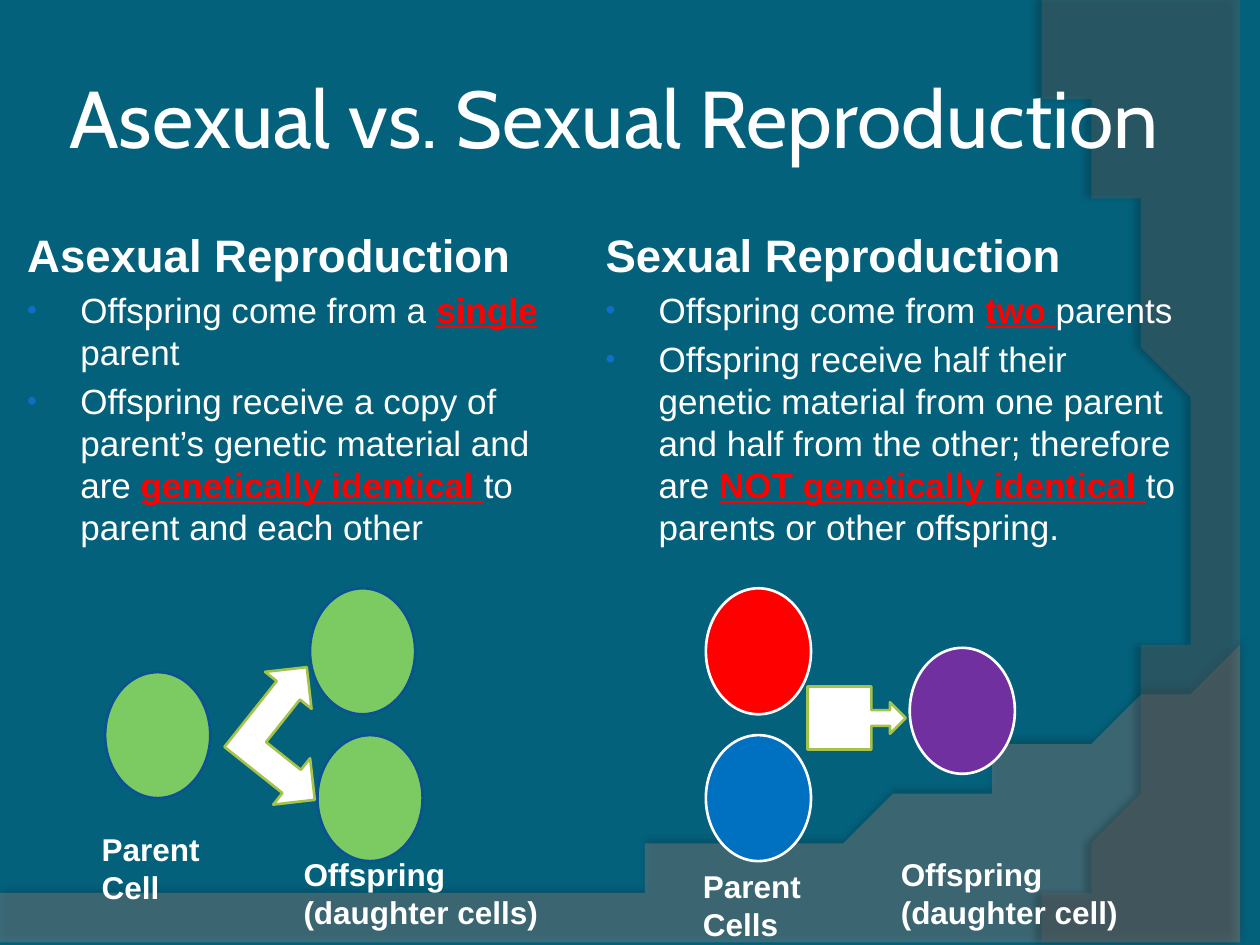
from lxml.etree import SubElement
from pptx import Presentation
from pptx.dml.color import RGBColor
from pptx.enum.shapes import MSO_SHAPE as Shape
from pptx.enum.text import MSO_ANCHOR as Anchor
from pptx.oxml.ns import qn
from pptx.util import Cm, Pt

TEAL = RGBColor(0x04, 0x61, 0x7B)
WHITE = RGBColor(0xFF, 0xFF, 0xFF)
RED = RGBColor(0xFF, 0x00, 0x00)
BLUE = RGBColor(0x00, 0x70, 0xC0)
PURPLE = RGBColor(0x70, 0x30, 0xA0)
GREEN = RGBColor(0x7C, 0xCA, 0x62)
NAVY = RGBColor(0x0B, 0x52, 0x92)
LIME = RGBColor(0xA5, 0xC2, 0x49)
BULLET = RGBColor(0x0F, 0x6F, 0xC6)
GRAY = RGBColor(0x7F, 0x7F, 0x7F)
DARK_GRAY = RGBColor(0x5E, 0x5E, 0x5E)
BLACK = RGBColor(0x00, 0x00, 0x00)


def add_xml(parent, tag, **attrs):
    return SubElement(parent, qn(tag), {k: str(v) for k, v in attrs.items()})


def bezier(p0, p1, p2, p3, steps=60):
    points = []
    for i in range(1, steps + 1):
        t = i / steps
        u = 1 - t
        weights = (u**3, 3 * u * u * t, 3 * u * t * t, t**3)
        points.append(tuple(sum(w * c for w, c in zip(weights, axis))
                            for axis in zip(p0, p1, p2, p3)))
    return points


class Deck:
    font = "Arial"
    title_font = "Cabin"
    line_width = Pt(1.5)

    def __init__(self, prs):
        self.s = prs.slides.add_slide(prs.slide_layouts[6])
        fill = self.s.background.fill
        fill.solid()
        fill.fore_color.rgb = TEAL

    def style(self, r, size, bold=False, color=WHITE, font=None):
        r.font.name = font or self.font
        r.font.size = Pt(size)
        r.font.bold = bold
        r.font.color.rgb = color

    def box(self, left, top, width, height):
        sp = self.s.shapes.add_textbox(Cm(left), Cm(top), Cm(width), Cm(height))
        sp.text_frame.word_wrap = True
        return sp.text_frame

    def title(self, text, *at):
        tf = self.box(*at)
        tf.vertical_anchor = Anchor.MIDDLE
        tf.margin_left = tf.margin_right = Cm(0.13)
        tf.text = text
        self.style(tf.paragraphs[0].runs[0], 46, font=self.title_font)

    def label(self, text, *at):
        tf = self.box(*at)
        tf.text = text
        for p in tf.paragraphs:
            self.style(p.runs[0], 18, bold=True)

    def column(self, heading, bullets, *at):
        tf = self.box(*at)
        tf.text = heading
        p = tf.paragraphs[0]
        p.space_before = Pt(5.2)
        p._p.get_or_add_pPr().set("marL", str(Cm(0.1)))
        self.style(p.runs[0], 26, bold=True)
        for before, key, after in bullets:
            self.bullet(tf.add_paragraph(), before, key, after)

    def bullet(self, p, before, key, after):
        p.space_before = Pt(4)
        pPr = p._p.get_or_add_pPr()
        pPr.set("marL", str(Cm(1.17)))
        pPr.set("indent", str(Cm(-1.07)))
        add_xml(add_xml(pPr, "a:buClr"), "a:srgbClr", val=BULLET)
        add_xml(pPr, "a:buSzPct", val=80000)
        add_xml(pPr, "a:buFont", typeface=self.font)
        add_xml(pPr, "a:buChar", char="•")
        for text in (before, key, after):
            r = p.add_run()
            r.text = text
            self.style(r, 20)
        r = p.runs[1]
        self.style(r, 20, bold=True, color=RED)
        r.font.underline = True

    def shape(self, kind, fill, line, left, top, width, height, rotation=0):
        sp = self.s.shapes.add_shape(kind, Cm(left), Cm(top), Cm(width), Cm(height))
        sp.shadow.inherit = False
        sp.rotation = rotation
        sp.fill.solid()
        sp.fill.fore_color.rgb = fill
        sp.line.color.rgb = line
        sp.line.width = self.line_width

    def cell(self, fill, line, left, top):
        self.shape(Shape.OVAL, fill, line, left, top, 2.12, 2.54)

    def swoosh(self, points, color, alpha, shadow_alpha, distance, angle):
        fb = self.s.shapes.build_freeform(*points[0], scale=Cm(1))
        fb.add_line_segments(points[1:], close=True)
        sp = fb.convert_to_shape()
        sp.shadow.inherit = False
        sp.line.fill.background()
        sp.fill.solid()
        sp.fill.fore_color.rgb = color
        spPr = sp._element.spPr
        add_xml(spPr.find(".//" + qn("a:srgbClr")), "a:alpha", val=alpha * 1000)
        shadow = add_xml(spPr.find(qn("a:effectLst")), "a:outerShdw",
                         blurRad=Pt(4), dist=Pt(distance), dir=angle * 60000,
                         algn="ctr", rotWithShape=0)
        clr = add_xml(shadow, "a:srgbClr", val=BLACK)
        add_xml(clr, "a:alpha", val=shadow_alpha * 1000)


def main():
    prs = Presentation()
    prs.slide_width, prs.slide_height = Cm(25.4), Cm(19.05)
    deck = Deck(prs)

    wave = [(0, 17.91), (0, 19.05), (25.4, 19.05), (25.4, 13.21)]
    wave += bezier(wave[-1], (14.2, 18.52), (9.93, 18.26), wave[0])
    deck.swoosh(wave, GRAY, 45, 35, 3.5, 270)
    arc = [(25.4, 0.05), (25.4, 19.05), (20.85, 19.05)]
    arc += bezier(arc[-1], (23.75, 15.72), (25.86, 7.62), (20.32, 0))
    deck.swoosh(arc, DARK_GRAY, 40, 45, 4, 180)

    deck.title("Asexual vs. Sexual Reproduction", 1.27, 0.76, 22.86, 3.18)
    deck.column("Asexual Reproduction", [
        ("Offspring come from a ", "single", " parent"),
        ("Offspring receive a copy of parent’s genetic material and are ",
         "genetically identical ", "to parent and each other"),
    ], 0.2, 4.45, 11.23, 7.42)
    deck.column("Sexual Reproduction", [
        ("Offspring come from ", "two ", "parents"),
        ("Offspring receive half their genetic material from one parent "
         "and half from the other; therefore are ",
         "NOT genetically identical ", "to parents or other offspring."),
    ], 11.86, 4.45, 12.27, 7.42)

    for left, top in [(6.25, 11.86), (2.12, 13.55), (6.4, 14.82)]:
        deck.cell(GREEN, NAVY, left, top)
    for fill, left, top in [(RED, 14.23, 11.86), (BLUE, 14.23, 14.82),
                            (PURPLE, 18.34, 13.06)]:
        deck.cell(fill, WHITE, left, top)
    deck.shape(Shape.LEFT_UP_ARROW, WHITE, LIME, 4.55, 13.64, 2.59, 2.39, 128.5)
    deck.shape(Shape.RIGHT_ARROW_CALLOUT, WHITE, LIME, 16.28, 13.84, 1.98, 1.27)

    deck.label("Parent Cell", 1.8, 16.61, 2.74, 1.8)
    deck.label("Parent Cells", 13.92, 17.35, 2.74, 1.8)
    deck.label("Offspring\n(daughter cells)", 5.87, 17.12, 5.99, 1.8)
    deck.label("Offspring\n(daughter cell)", 17.91, 17.12, 5.99, 1.8)

    prs.save("out.pptx")


if __name__ == "__main__":
    main()
